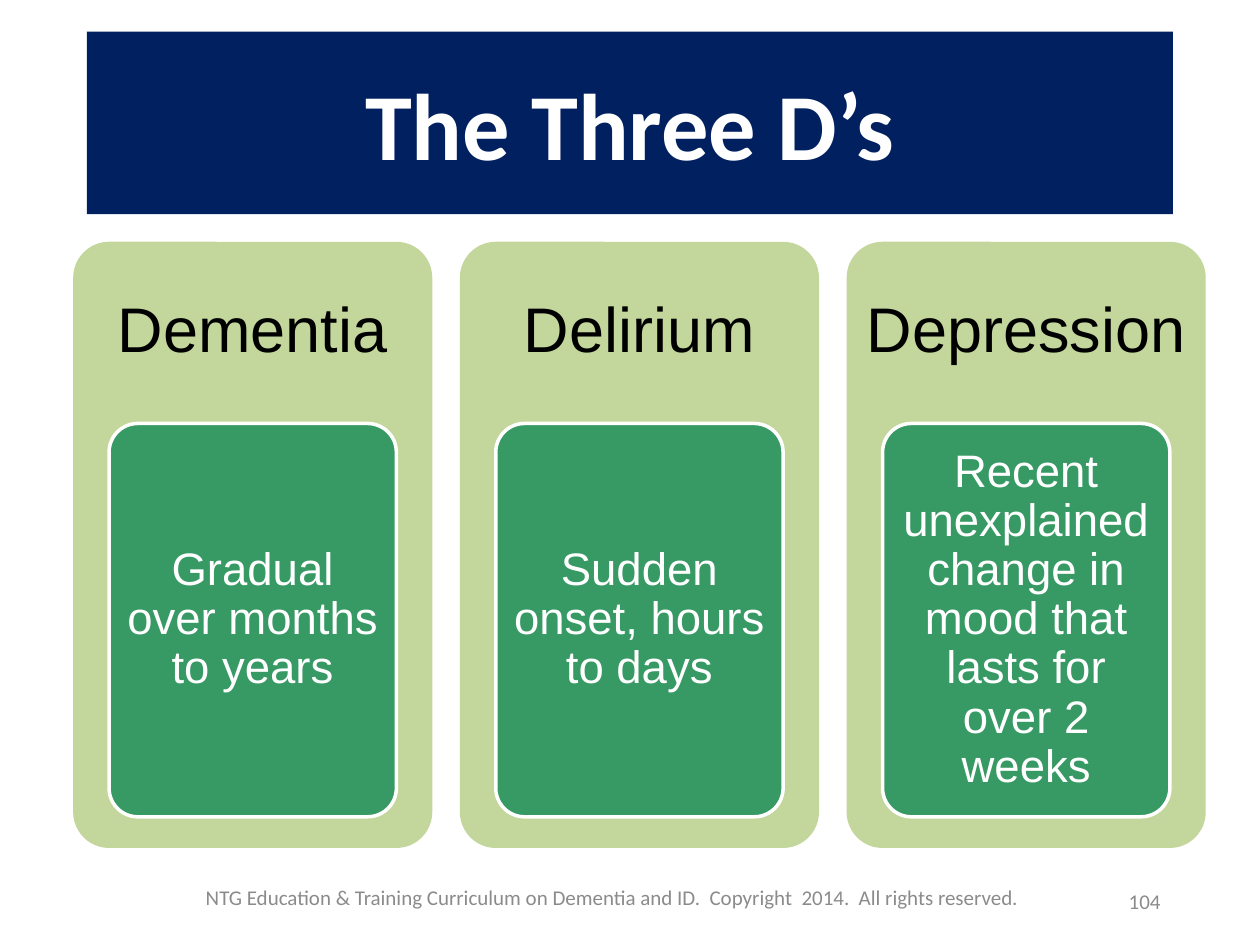
from pptx import Presentation
from pptx.dml.color import RGBColor
from pptx.enum.shapes import MSO_SHAPE
from pptx.enum.text import MSO_ANCHOR, PP_ALIGN
from pptx.util import Pt

TITLE = "The Three D’s"
CONDITIONS = [
    ("Dementia", "Gradual over months to years"),
    ("Delirium", "Sudden onset, hours to days"),
    ("Depression", "Recent unexplained change in mood that lasts for over 2 weeks"),
]
FOOTER = "NTG Education & Training Curriculum on Dementia and ID.  Copyright  2014.  All rights reserved."
PAGE_NUMBER = "104"

THEME = {
    "navy": "002060", "light_green": "C3D69B", "green": "379963",
    "white": "FFFFFF", "black": "000000", "gray": "8B8B8B",
    "title_size": 54, "heading_size": 36, "detail_size": 26, "footer_size": 12,
    "title_font": "Calibri", "body_font": "Arial",
}

PANEL_LEFT, PANEL_TOP, PANEL_WIDTH, PANEL_HEIGHT = 41.8, 138.2, 205.2, 346.4
PANEL_PITCH = 221
HEADING_HEIGHT = 103.8
CARD_WIDTH, CARD_HEIGHT = 164.2, 224.8
CORNER = 0.1


def color(name):
    return RGBColor.from_string(THEME[name])


def write(holder, text, role, font, ink, align=PP_ALIGN.CENTER, bold=False,
          insets=(7.2, 3.6), spacing=None):
    frame = holder.text_frame
    frame.word_wrap = True
    frame.vertical_anchor = MSO_ANCHOR.MIDDLE
    frame.margin_left = frame.margin_right = Pt(insets[0])
    frame.margin_top = frame.margin_bottom = Pt(insets[1])
    paragraph = frame.paragraphs[0]
    paragraph.alignment = align
    if spacing:
        paragraph.line_spacing = spacing
    run = paragraph.add_run()
    run.text = text
    run.font.size = Pt(THEME[role])
    run.font.name = THEME[font]
    run.font.bold = bold
    run.font.color.rgb = color(ink)


def add_block(slide, preset, box, fill, outline=None):
    block = slide.shapes.add_shape(preset, *map(Pt, box))
    block.shadow.inherit = False
    block.fill.solid()
    block.fill.fore_color.rgb = color(fill)
    if outline:
        block.line.color.rgb = color(outline)
        block.line.width = Pt(2)
    else:
        block.line.fill.background()
    if preset == MSO_SHAPE.ROUNDED_RECTANGLE:
        block.adjustments[0] = CORNER
    return block


def add_label(slide, box, *args, **options):
    write(slide.shapes.add_textbox(*map(Pt, box)), *args, **options)


def add_condition(slide, left, heading, detail):
    rounded = MSO_SHAPE.ROUNDED_RECTANGLE
    add_block(slide, rounded, (left, PANEL_TOP, PANEL_WIDTH, PANEL_HEIGHT), "light_green")
    add_label(slide, (left, PANEL_TOP, PANEL_WIDTH, HEADING_HEIGHT), heading,
              "heading_size", "body_font", "black", insets=(10.8, 10.8), spacing=0.9)
    card_left = left + (PANEL_WIDTH - CARD_WIDTH) / 2
    card_top = PANEL_TOP + HEADING_HEIGHT
    card = add_block(slide, rounded, (card_left, card_top, CARD_WIDTH, CARD_HEIGHT),
                     "green", "white")
    write(card, detail, "detail_size", "body_font", "white", insets=(5, 3.8), spacing=0.9)


def main():
    deck = Presentation()
    deck.slide_width, deck.slide_height = Pt(720), Pt(540)
    slide = deck.slides.add_slide(deck.slide_layouts[6])

    banner = add_block(slide, MSO_SHAPE.RECTANGLE, (49.7, 18, 620.6, 104.4), "navy")
    write(banner, TITLE, "title_size", "title_font", "white", bold=True)
    add_label(slide, (41.8, 498.2, 616.3, 28.8), FOOTER,
              "footer_size", "title_font", "gray")
    add_label(slide, (508.3, 500.4, 162, 28.8), PAGE_NUMBER,
              "footer_size", "title_font", "gray", align=PP_ALIGN.RIGHT)
    for index, (heading, detail) in enumerate(CONDITIONS):
        add_condition(slide, PANEL_LEFT + index * PANEL_PITCH, heading, detail)

    deck.save("out.pptx")


if __name__ == "__main__":
    main()
